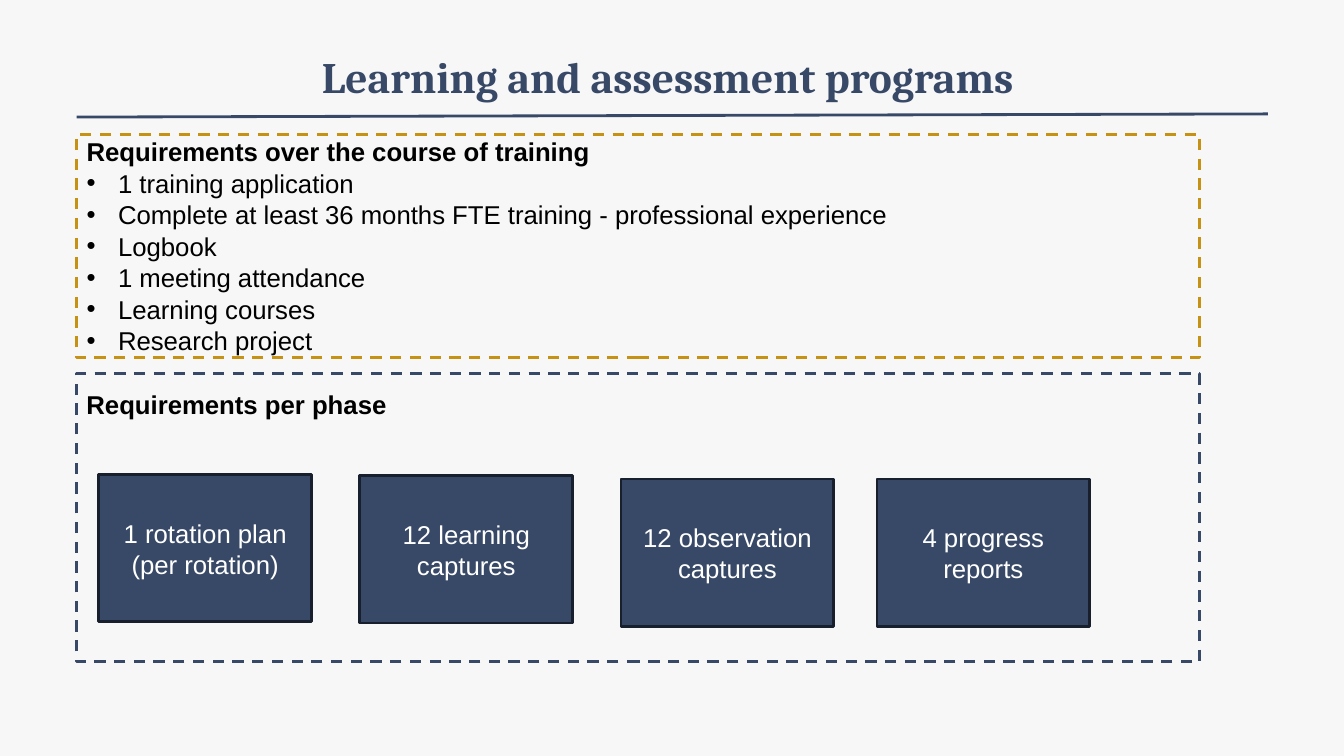
from lxml.etree import SubElement
from pptx import Presentation
from pptx.dml.color import RGBColor
from pptx.enum.dml import MSO_LINE_DASH_STYLE as Dash
from pptx.enum.shapes import MSO_CONNECTOR as Connector, MSO_SHAPE as Shape
from pptx.enum.text import MSO_ANCHOR as Anchor, MSO_AUTO_SIZE as AutoSize, PP_ALIGN as Align
from pptx.oxml.ns import qn
from pptx.util import Cm, Pt

NAVY = RGBColor(0x38, 0x49, 0x67)
DARK_NAVY = RGBColor(0x19, 0x20, 0x2D)
GOLD = RGBColor(0xC6, 0x92, 0x14)
BLACK = RGBColor(0, 0, 0)
WHITE = RGBColor(255, 255, 255)
PALE_GREY = RGBColor(0xF7, 0xF7, 0xF7)

TRAINING_ITEMS = [
    "1 training application",
    "Complete at least 36 months FTE training - professional experience",
    "Logbook",
    "1 meeting attendance",
    "Learning courses",
    "Research project",
]
# Text, left and top of each phase card
PHASE_CARDS = [
    ("1 rotation plan (per rotation)", 2.49, 11.96),
    ("12 learning captures", 9.07, 11.99),
    ("12 observation captures", 15.65, 12.07),
    ("4 progress reports", 22.1, 12.07),
]


class SlideBuilder:
    HEADING = {"name": "Arial", "size": Pt(18.4), "bold": True, "color": BLACK}
    BODY = {**HEADING, "bold": False}
    CARD = {**BODY, "color": WHITE}
    TITLE = {"name": "Cambria", "size": Pt(31), "bold": True, "color": NAVY}
    INDENT = Cm(0.79)

    def __init__(self, slide):
        self.slide = slide
        fill = slide.background.fill
        fill.solid()
        fill.fore_color.rgb = PALE_GREY

    def place(self, shape, box):
        for name, value in zip(("left", "top", "width", "height"), box):
            setattr(shape, name, Cm(value))

    def frame_text(self, shape, anchor):
        frame = shape.text_frame
        settings = {"word_wrap": True, "auto_size": AutoSize.NONE, "vertical_anchor": anchor}
        for name, value in settings.items():
            setattr(frame, name, value)
        return frame

    def add_text(self, paragraph, text, style, align=Align.LEFT):
        layout = {"alignment": align, "line_spacing": 1.02, "space_before": Pt(0), "space_after": Pt(0)}
        for name, value in layout.items():
            setattr(paragraph, name, value)
        run = paragraph.add_run()
        run.text = text
        for name, value in style.items():
            if name == "color":
                run.font.color.rgb = value
            else:
                setattr(run.font, name, value)

    def set_bullet(self, paragraph, bulleted):
        properties = paragraph._p.get_or_add_pPr()
        indent = self.INDENT if bulleted else 0
        properties.set("marL", str(indent))
        properties.set("indent", str(-indent))
        if bulleted:
            SubElement(properties, qn("a:buFont"), typeface="Arial")
            SubElement(properties, qn("a:buChar"), char="•")
        else:
            SubElement(properties, qn("a:buNone"))

    def title(self, text, box):
        title = self.slide.shapes.title
        self.place(title, box)
        frame = self.frame_text(title, Anchor.MIDDLE)
        self.add_text(frame.paragraphs[0], text, self.TITLE, Align.CENTER)

    def bullet_list(self, heading, items, box):
        body = self.slide.placeholders[1]
        self.place(body, box)
        frame = self.frame_text(body, Anchor.TOP)
        for index, text in enumerate([heading, *items]):
            paragraph = frame.add_paragraph() if index else frame.paragraphs[0]
            self.set_bullet(paragraph, index > 0)
            self.add_text(paragraph, text, self.BODY if index else self.HEADING)

    def heading(self, text, box):
        text_box = self.slide.shapes.add_textbox(*map(Cm, box))
        frame = self.frame_text(text_box, Anchor.TOP)
        self.add_text(frame.paragraphs[0], text, self.HEADING)

    def rule(self, ends, color):
        line = self.slide.shapes.add_connector(Connector.STRAIGHT, *map(Cm, ends))
        line.line.color.rgb = color
        line.line.width = Pt(2)
        SubElement(line._element.spPr, qn("a:effectLst"))

    def rectangle(self, box, line_color, fill_color=None):
        shape = self.slide.shapes.add_shape(Shape.RECTANGLE, *map(Cm, box))
        shape.shadow.inherit = False
        shape.line.color.rgb = line_color
        shape.line.width = Pt(2)
        if fill_color is None:
            shape.fill.background()
        else:
            shape.fill.solid()
            shape.fill.fore_color.rgb = fill_color
        return shape

    def dashed_panel(self, box, color):
        self.rectangle(box, color).line.dash_style = Dash.DASH

    def card(self, text, left, top):
        shape = self.rectangle((left, top, 5.36, 3.71), DARK_NAVY, NAVY)
        frame = self.frame_text(shape, Anchor.MIDDLE)
        self.add_text(frame.paragraphs[0], text, self.CARD, Align.CENTER)


def main():
    presentation = Presentation()
    presentation.slide_width = Cm(33.87)
    presentation.slide_height = Cm(19.05)
    builder = SlideBuilder(presentation.slides.add_slide(presentation.slide_layouts[1]))

    # Title and rule
    builder.title("Learning and assessment programs", (4.11, 0.74, 25.43, 2.31))
    builder.rule((1.93, 2.95, 31.95, 2.87), NAVY)

    # Whole-training requirements
    builder.dashed_panel((1.93, 3.38, 28.3, 5.64), GOLD)
    builder.bullet_list("Requirements over the course of training", TRAINING_ITEMS,
                        (1.93, 3.28, 24.99, 5.64))

    # Per-phase requirements
    builder.dashed_panel((1.93, 9.42, 28.3, 7.26), NAVY)
    builder.heading("Requirements per phase", (1.93, 9.65, 16.94, 1.02))
    for text, left, top in PHASE_CARDS:
        builder.card(text, left, top)

    presentation.save("out.pptx")


if __name__ == "__main__":
    main()
